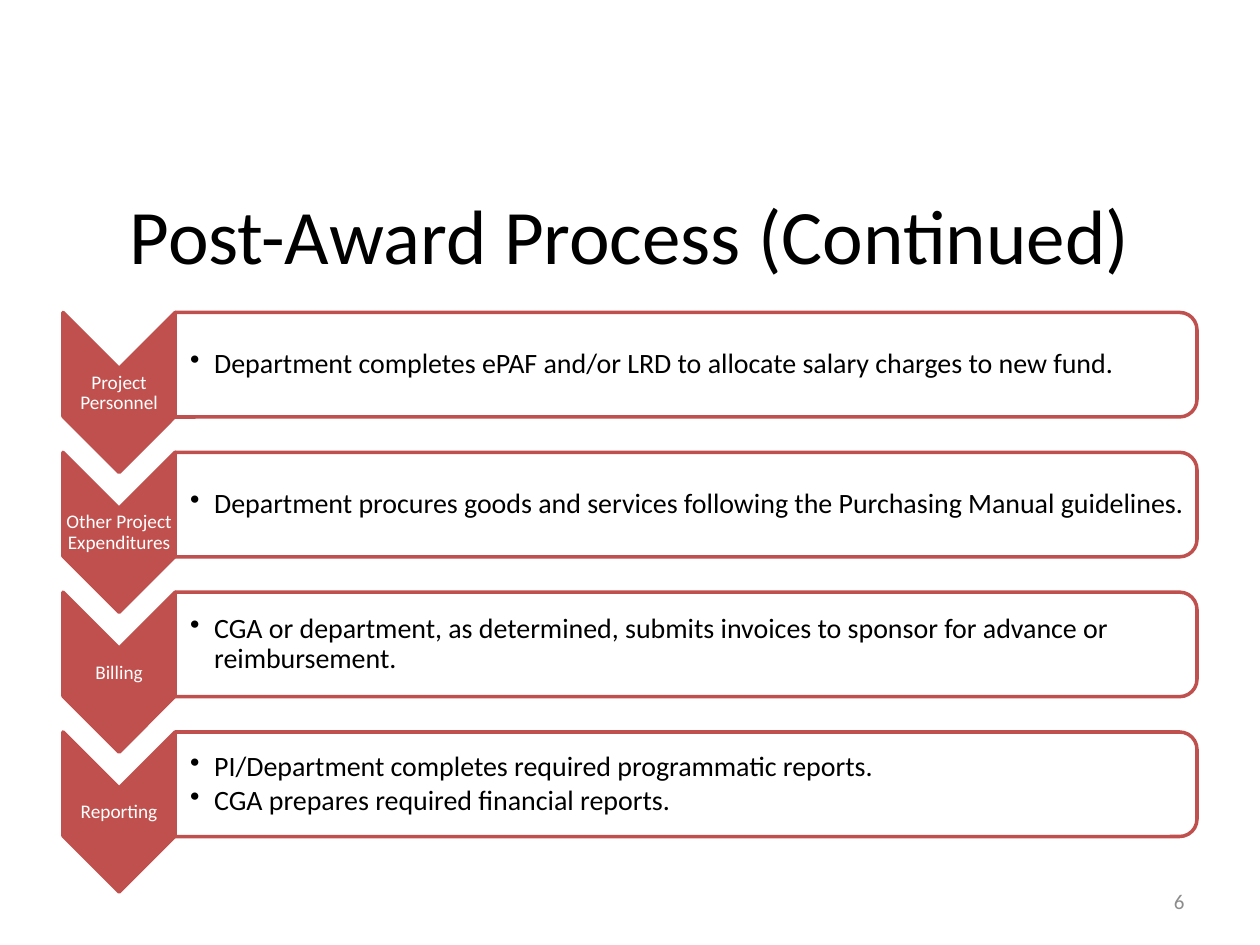
"""Build the continued post-award process slide with four chevron steps."""
import pptx
import pptx.dml.color
import pptx.enum.shapes
import pptx.enum.text
import pptx.oxml
import pptx.oxml.ns
import pptx.util

Inches = pptx.util.Inches
Pt = pptx.util.Pt
SHAPE = pptx.enum.shapes.MSO_SHAPE
ALIGN = pptx.enum.text.PP_ALIGN
COLORS = {"accent": "C0504D", "panel": "FFFFFF", "label": "FFFFFF",
          "text": "000000", "number": "8C8C8C"}
STEPS = [
    ("Project Personnel",
     ["Department completes ePAF and/or LRD to allocate salary charges to new fund."]),
    ("Other Project Expenditures",
     ["Department procures goods and services following the Purchasing Manual guidelines."]),
    ("Billing",
     ["CGA or department, as determined, submits invoices to sponsor for advance or reimbursement."]),
    ("Reporting",
     ["PI/Department completes required programmatic reports.",
      "CGA prepares required financial reports."]),
]
STEP_PITCH = 1.11


def add_block(shapes, geometry, box, fill):
    """Add a preset shape turned a quarter clockwise with an accent outline."""
    shape = shapes.add_shape(geometry, *map(Inches, box))
    shape.rotation = 90
    shape.shadow.inherit = False
    shape.fill.solid()
    shape.fill.fore_color.rgb = pptx.dml.color.RGBColor.from_string(COLORS[fill])
    shape.line.color.rgb = pptx.dml.color.RGBColor.from_string(COLORS["accent"])
    shape.line.width = Pt(2)
    return shape


def write_text(shape, lines, size, color, paragraph_format, margins=None, bullet=False):
    """Fill a shape with formatted paragraphs, centred vertically."""
    frame = shape.text_frame
    frame_format = {"word_wrap": True, "vertical_anchor": pptx.enum.text.MSO_ANCHOR.MIDDLE}
    for side, margin in (margins or {}).items():
        frame_format["margin_" + side] = Inches(margin)
    for name, value in frame_format.items():
        setattr(frame, name, value)
    frame.text = "\n".join(lines)
    for paragraph in frame.paragraphs:
        for name, value in paragraph_format.items():
            setattr(paragraph, name, value)
        if bullet:
            properties = paragraph._p.get_or_add_pPr()
            properties.set("marL", str(Inches(0.19)))
            properties.set("indent", str(Inches(-0.19)))
            properties.append(pptx.oxml.parse_xml(
                f'<a:buChar {pptx.oxml.ns.nsdecls("a")} char="•"/>'))
        for run in paragraph.runs:
            for name, value in {"name": "Calibri", "size": Pt(size)}.items():
                setattr(run.font, name, value)
            run.font.color.rgb = pptx.dml.color.RGBColor.from_string(COLORS[color])


presentation = pptx.Presentation()
presentation.slide_width = Inches(10)
presentation.slide_height = Inches(7.5)
slide = presentation.slides.add_slide(presentation.slide_layouts[5])

title = slide.shapes.title
for name, value in {"left": 0.5, "top": 1.23, "width": 9, "height": 1.25}.items():
    setattr(title, name, Inches(value))
write_text(title, ["Post-Award Process (Continued)"], 44, "text", {"alignment": ALIGN.CENTER})

label_format = {"alignment": ALIGN.CENTER, "line_spacing": 0.9, "space_after": Pt(3.85)}
detail_format = {"alignment": ALIGN.LEFT, "line_spacing": 0.9, "space_after": Pt(2.4)}
label_margins = dict.fromkeys(("left", "top", "right", "bottom"), 0.01)
detail_margins = {**label_margins, "left": 0.12}

process = slide.shapes.add_group_shape().shapes
for index, (label, details) in enumerate(STEPS):
    offset = index * STEP_PITCH
    add_block(process, SHAPE.CHEVRON, (0.31, 2.67 + offset, 1.27, 0.89), "accent")
    label_box = process.add_textbox(*map(Inches, (0.5, 2.93 + offset, 0.89, 0.38)))
    write_text(label_box, [label], 11, "label", label_format, label_margins)

    panel = add_block(process, SHAPE.ROUND_2_SAME_RECTANGLE,
                      (5.03, -1.16 + offset, 0.83, 8.11), "panel")
    panel_color = panel.fill._xPr.find(".//" + pptx.oxml.ns.qn("a:srgbClr"))
    panel_color.append(pptx.oxml.parse_xml(
        f'<a:alpha {pptx.oxml.ns.nsdecls("a")} val="90000"/>'))
    detail_box = process.add_textbox(*map(Inches, (1.39, 2.52 + offset, 8.07, 0.75)))
    write_text(detail_box, details, 16, "text", detail_format, detail_margins, bullet=True)

number_box = slide.shapes.add_textbox(*map(Inches, (7.17, 6.95, 2.33, 0.4)))
write_text(number_box, ["6"], 12, "number", {"alignment": ALIGN.RIGHT})

presentation.save("out.pptx")
